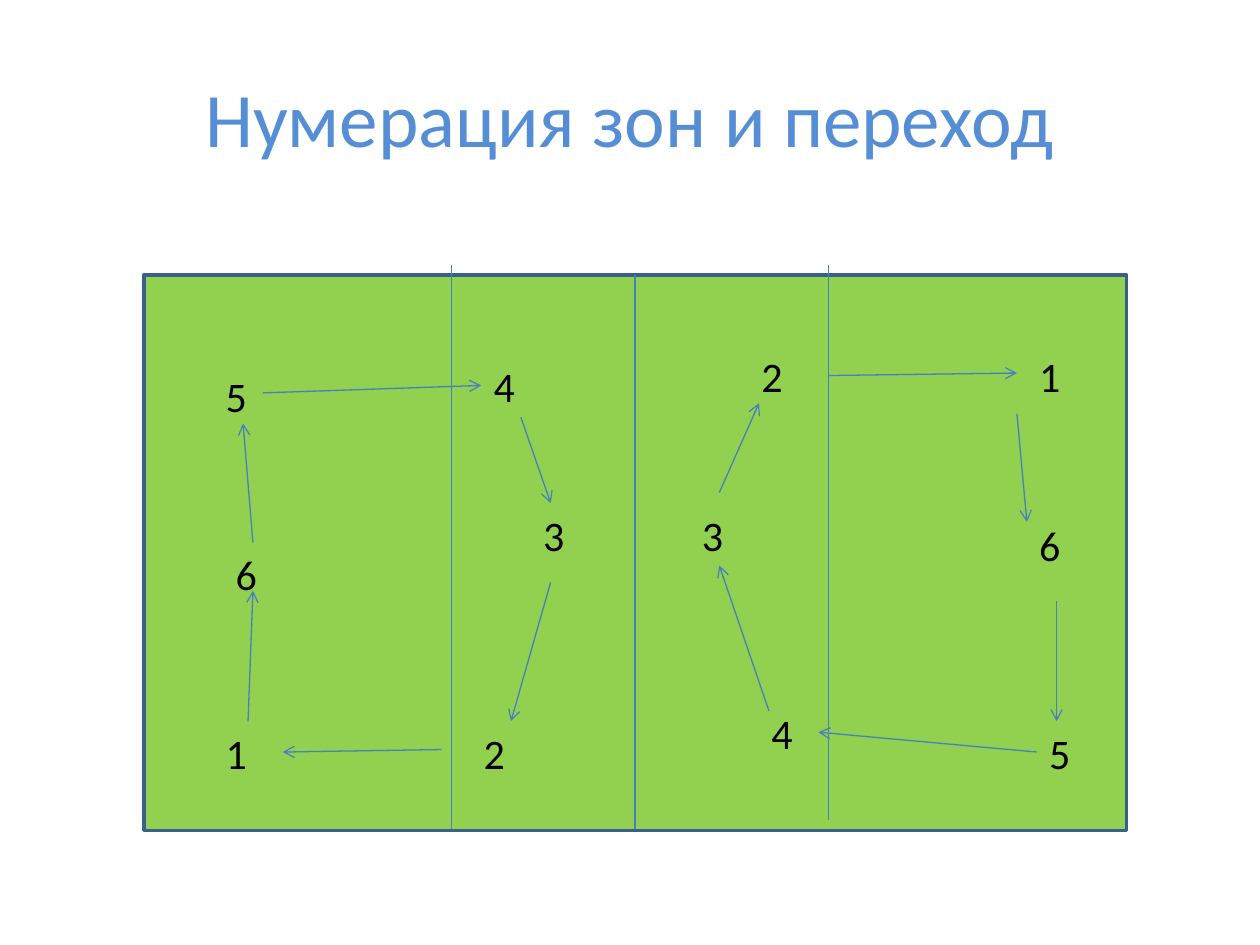
from dataclasses import dataclass

from lxml.etree import SubElement
from pptx import Presentation
from pptx.dml.color import RGBColor
from pptx.enum.shapes import MSO_CONNECTOR as Connector, MSO_SHAPE as Preset
from pptx.enum.text import MSO_ANCHOR as Anchor, MSO_AUTO_SIZE as AutoSize, PP_ALIGN as Align
from pptx.oxml.ns import qn
from pptx.util import Cm, Pt


@dataclass(frozen=True)
class Theme:
    """Colours, type sizes and line widths of the slide."""
    font: str = "Calibri"
    title: RGBColor = RGBColor.from_string("558ED5")
    text: RGBColor = RGBColor.from_string("000000")
    court: RGBColor = RGBColor.from_string("92D050")
    border: RGBColor = RGBColor.from_string("3A5F8C")
    line: RGBColor = RGBColor.from_string("4B7EBC")
    title_size: Pt = Pt(44)
    zone_size: Pt = Pt(24)
    border_width: Pt = Pt(2)
    line_width: Pt = Pt(0.75)


THEME = Theme()
TITLE_BOX = (1.27, 0.76, 22.86, 3.18)
COURT_BOX = (2.9, 5.54, 19.81, 11.2)
ZONE_HEIGHT = 1.27
COURT_LINES = [
    ((9.9, 0), (9.9, 11.18)),
    ((13.8, -0.2), (13.8, 11)),
    ((6.2, -0.2), (6.2, 11.18)),
]
RIGHT_ZONES = [
    ("1", 17.8, 1.4, 1.6), ("2", 12.2, 1.4, 1.6), ("3", 11, 4.6, 1.2),
    ("4", 12.4, 8.6, 1.2), ("5", 18, 9, 1.4), ("6", 17.8, 4.8, 1.4),
]
LEFT_ZONES = [
    ("1", 1.4, 9, 1.4), ("2", 6.6, 9, 1.6), ("3", 7.8, 4.6, 2),
    ("4", 6.8, 1.6, 1.6), ("5", 1.4, 1.8, 2), ("6", 1.6, 5.4, 2),
]
RIGHT_ROTATION = [
    ((17.6, 2.8), (17.8, 4.98)), ((18.4, 6.58), (18.4, 9)),
    ((18, 9.62), (13.6, 9.22)), ((12.6, 8.79), (11.6, 5.86)),
    ((11.6, 4.39), (12.4, 2.59)), ((13.8, 2.03), (17.6, 1.98)),
]
LEFT_ROTATION = [
    ((2.1, 9), (2.2, 6.37)), ((2.2, 5.4), (2, 3)),
    ((2.4, 2.38), (6.8, 2.23)), ((7.6, 2.87), (8.2, 4.6)),
    ((8.2, 6.2), (7.4, 9)), ((6, 9.57), (2.8, 9.62)),
]


def set_attributes(target, values):
    """Set each named value on the target."""
    for name, value in values.items():
        setattr(target, name, value)


def write_text(shape, text, size, color, alignment):
    """Fill a shape with one formatted paragraph."""
    paragraph = shape.text_frame.paragraphs[0]
    paragraph.alignment = alignment
    run = paragraph.add_run()
    run.text = text
    set_attributes(run.font, {"name": THEME.font, "size": size})
    run.font.color.rgb = color


def add_title(slide, box, text):
    """Place and format the title placeholder."""
    title = slide.shapes.title
    set_attributes(title, dict(zip(("left", "top", "width", "height"), map(Cm, box))))
    title.text_frame.vertical_anchor = Anchor.MIDDLE
    write_text(title, text, THEME.title_size, THEME.title, Align.CENTER)


def add_line(slide, box, start, end, arrow=False):
    """Draw a line inside the box, with an arrowhead at its end if asked."""
    left, top = box[:2]
    points = [Cm(base + offset) for point in (start, end)
              for base, offset in zip((left, top), point)]
    connector = slide.shapes.add_connector(Connector.STRAIGHT, *points)
    connector.line.color.rgb = THEME.line
    connector.line.width = THEME.line_width
    if arrow:
        SubElement(connector.line._get_or_add_ln(), qn("a:tailEnd"), type="arrow")
    SubElement(connector._element.spPr, qn("a:effectLst"))


def add_court(slide, box):
    """Draw the court with its lines."""
    court = slide.shapes.add_shape(Preset.RECTANGLE, *map(Cm, box))
    court.shadow.inherit = False
    court.fill.solid()
    court.fill.fore_color.rgb = THEME.court
    court.line.color.rgb = THEME.border
    court.line.width = THEME.border_width
    for start, end in COURT_LINES:
        add_line(slide, box, start, end)


def add_team(slide, box, zones, rotation):
    """Place one team's zone numbers and the arrows between them."""
    left, top = box[:2]
    for number, x, y, width in zones:
        label = slide.shapes.add_textbox(
            Cm(left + x), Cm(top + y), Cm(width), Cm(ZONE_HEIGHT))
        set_attributes(label.text_frame,
                       {"word_wrap": True, "auto_size": AutoSize.SHAPE_TO_FIT_TEXT})
        write_text(label, number, THEME.zone_size, THEME.text, Align.LEFT)
    for start, end in rotation:
        add_line(slide, box, start, end, arrow=True)


def main():
    """Build and save the presentation."""
    presentation = Presentation()
    set_attributes(presentation, {"slide_width": Cm(25.4), "slide_height": Cm(19.05)})
    slide = presentation.slides.add_slide(presentation.slide_layouts.get_by_name("Title Only"))
    add_title(slide, TITLE_BOX, "Нумерация зон и переход")
    add_court(slide, COURT_BOX)
    add_team(slide, COURT_BOX, RIGHT_ZONES, RIGHT_ROTATION)
    add_team(slide, COURT_BOX, LEFT_ZONES, LEFT_ROTATION)
    presentation.save("out.pptx")


if __name__ == "__main__":
    main()
